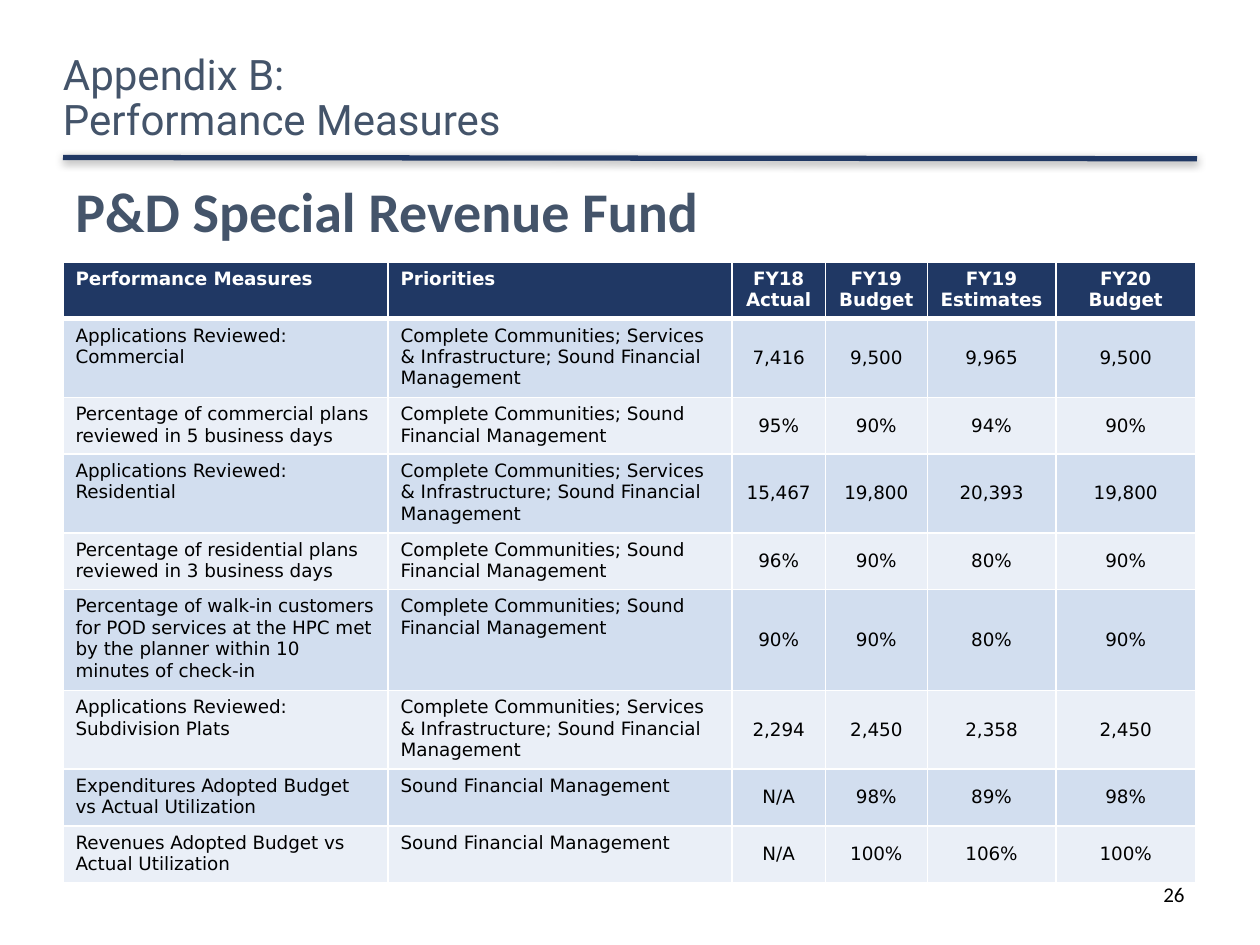
"""Build the performance measures slide for the special revenue fund."""
import pptx
import pptx.dml.color
import pptx.enum.shapes
import pptx.enum.text
import pptx.oxml
import pptx.util
from pptx.util import Inches

ALIGN = pptx.enum.text.PP_ALIGN
ANCHOR = pptx.enum.text.MSO_ANCHOR
NAVY, SLATE, BLACK, WHITE = "203864", "44546A", "000000", "FFFFFF"
BANDS = ["D2DEEF", "EAEFF7"]
SPACE = 'xmlns:a="http://schemas.openxmlformats.org/drawingml/2006/main"'

FULL = "Complete Communities; Services & Infrastructure; Sound Financial Management"
PART = "Complete Communities; Sound Financial Management"
SOUND = "Sound Financial Management"
WIDTHS = [2.58, 2.73, 0.74, 0.81, 1.02, 1.11]
HEAD = ["Performance Measures", "Priorities", "FY18\nActual", "FY19\nBudget",
        "FY19\nEstimates", "FY20\nBudget"]
ROWS = [
    ["Applications Reviewed: Commercial", FULL, "7,416", "9,500", "9,965", "9,500"],
    ["Percentage of commercial plans reviewed in 5 business days", PART,
     "95%", "90%", "94%", "90%"],
    ["Applications Reviewed: Residential", FULL, "15,467", "19,800", "20,393", "19,800"],
    ["Percentage of residential plans reviewed in 3 business days", PART,
     "96%", "90%", "80%", "90%"],
    ["Percentage of walk-in customers for POD services at the HPC met by the planner "
     "within 10 minutes of check-in", PART, "90%", "90%", "80%", "90%"],
    ["Applications Reviewed: Subdivision Plats", FULL, "2,294", "2,450", "2,358", "2,450"],
    ["Expenditures Adopted Budget vs Actual Utilization", SOUND, "N/A", "98%", "89%", "98%"],
    ["Revenues Adopted Budget vs Actual Utilization", SOUND, "N/A", "100%", "106%", "100%"],
]


def color(code):
    return pptx.dml.color.RGBColor.from_string(code)


def style(frame, face, size, code, bold=False, align=ALIGN.LEFT):
    for para in frame.paragraphs:
        para.alignment = align
        for run in para.runs:
            run.font.name = face
            run.font.size = pptx.util.Pt(size)
            run.font.bold = bold
            run.font.color.rgb = color(code)


def add_text(slide, place, text, *look, wrap=True, **more):
    frame = slide.shapes.add_textbox(*map(Inches, place)).text_frame
    frame.word_wrap = wrap
    frame.text = text
    style(frame, *look, **more)
    return frame


def add_title(slide):
    frame = add_text(slide, (0.5, 0.33, 6.86, 0.92),
                     "Appendix B:\vPerformance Measures", "Roboto", 24, SLATE)
    frame.vertical_anchor = ANCHOR.MIDDLE
    frame.margin_left = frame.margin_right = frame.margin_top = frame.margin_bottom = 0
    frame.paragraphs[0].line_spacing = 0.9


def add_rule(slide):
    rule = slide.shapes.add_connector(
        pptx.enum.shapes.MSO_CONNECTOR.STRAIGHT,
        *map(Inches, (0.5, 1.25, 9.5, 1.26)))
    rule.line.color.rgb = color(NAVY)
    rule.line.width = pptx.util.Pt(3)
    rule._element.spPr.append(pptx.oxml.parse_xml(
        f'<a:effectLst {SPACE}><a:outerShdw blurRad="63500" dist="20320" dir="5400000" '
        f'rotWithShape="0"><a:srgbClr val="{BLACK}"><a:alpha val="38000"/></a:srgbClr>'
        '</a:outerShdw></a:effectLst>'))


def add_edges(cell, top, base):
    props = cell._tc.get_or_add_tcPr()
    for side, size in zip("LRTB", (1, 1, top, base)):
        props.append(pptx.oxml.parse_xml(
            f'<a:ln{side} {SPACE} w="{pptx.util.Pt(size)}"><a:solidFill>'
            f'<a:srgbClr val="{WHITE}"/></a:solidFill></a:ln{side}>'))


def add_grid(slide):
    data = [HEAD] + ROWS
    table = slide.shapes.add_table(
        len(data), len(HEAD), *map(Inches, (0.5, 2.08, 9, 4.92))).table
    for col, width in zip(table.columns, WIDTHS):
        col.width = Inches(width)
    for i, line in enumerate(data):
        head = i == 0
        table.rows[i].height = Inches(0.44 if i == len(ROWS) else 0.36)
        for j, text in enumerate(line):
            cell = table.cell(i, j)
            figure = j > 1
            cell.text_frame.text = text
            style(cell.text_frame, "DejaVu Sans", 10.5, WHITE if head else BLACK,
                  head, ALIGN.CENTER if figure else ALIGN.LEFT)
            if figure and not head:
                cell.vertical_anchor = ANCHOR.MIDDLE
            add_edges(cell, 3 if i == 1 else 1, 3 if head else 1)
            cell.fill.solid()
            cell.fill.fore_color.rgb = color(NAVY if head else BANDS[(i - 1) % 2])


def main():
    deck = pptx.Presentation()
    deck.slide_width, deck.slide_height = Inches(10), Inches(7.5)
    slide = deck.slides.add_slide(deck.slide_layouts[6])
    add_rule(slide)
    add_title(slide)
    add_text(slide, (7.17, 6.95, 2.33, 0.4), "26", "Calibri", 12, BLACK,
             align=ALIGN.RIGHT)
    add_grid(slide)
    add_text(slide, (0.5, 1.35, 5.19, 0.64), "P&D Special Revenue Fund",
             "Calibri", 32, SLATE, wrap=False, bold=True)
    deck.save("out.pptx")


if __name__ == "__main__":
    main()
